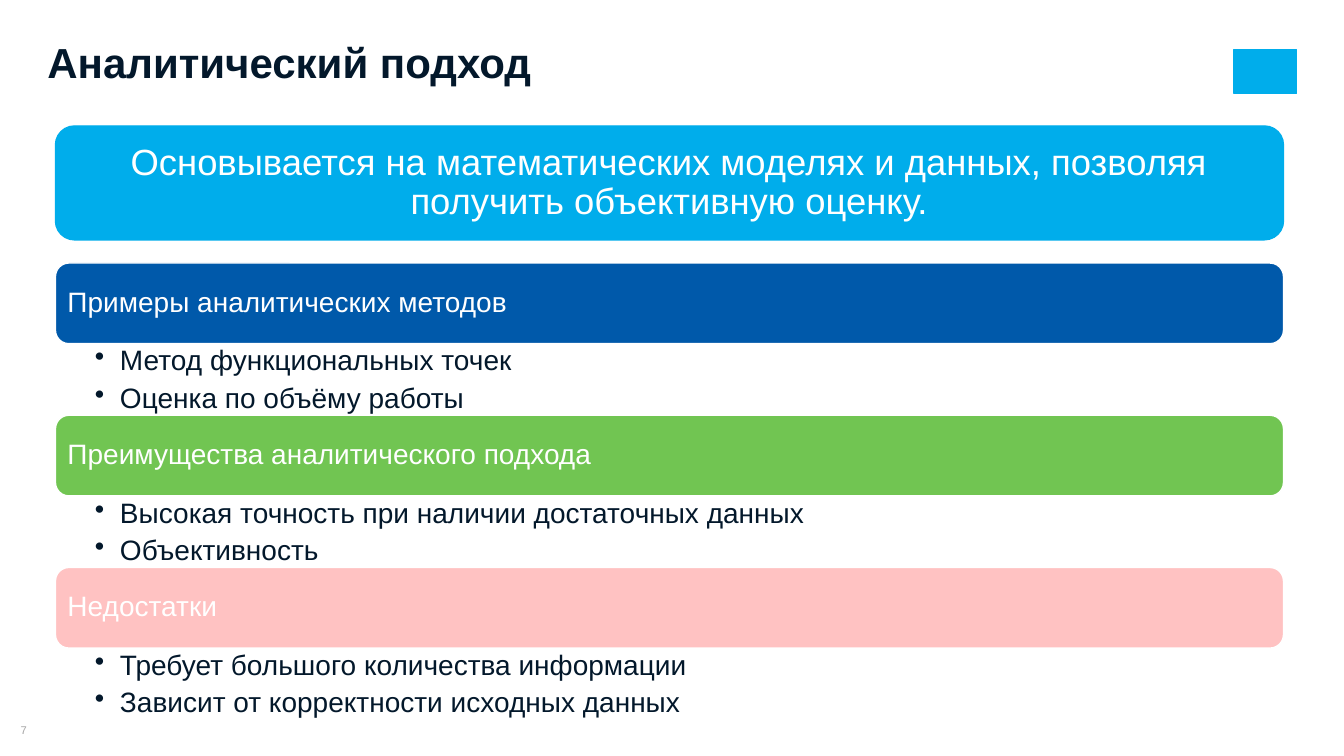
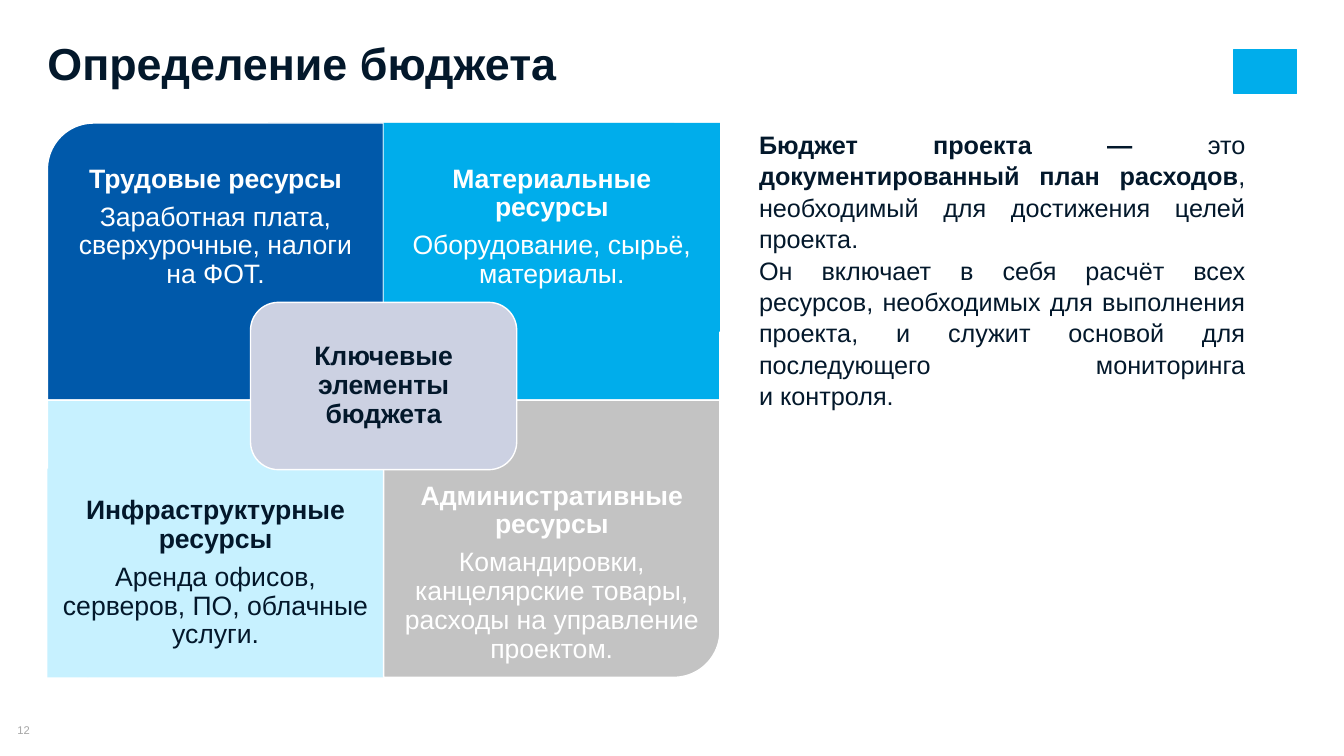
import pptx
import pptx.util
import pptx.dml.color
import pptx.enum.shapes
import pptx.enum.text
import lxml.etree

Inches = pptx.util.Inches
Pt = pptx.util.Pt
SHAPES = pptx.enum.shapes.MSO_SHAPE
ANCHOR = pptx.enum.text.MSO_ANCHOR
ALIGN = pptx.enum.text.PP_ALIGN

FONT = "Arial"
INK, WHITE, GRAY = "03182B", "FFFFFF", "A6A6A6"
BLUE, CYAN, GREEN, RED = "0059AA", "00ADEB", "71C552", "FF0000"
PALE, SILVER, LAVENDER = "C7F1FF", "C3C3C3", "CCD1E2"

APPROACH = {
    "title": "Аналитический подход",
    "title_size": 30,
    "number": "7",
    "summary": "Основывается на математических моделях и данных, позволяя получить объективную оценку.",
    "sections": [
        ("Примеры аналитических методов", BLUE, 100,
         ["Метод функциональных точек", "Оценка по объёму работы"]),
        ("Преимущества аналитического подхода", GREEN, 100,
         ["Высокая точность при наличии достаточных данных", "Объективность"]),
        ("Недостатки", RED, 24,
         ["Требует большого количества информации", "Зависит от корректности исходных данных"]),
    ],
}

BUDGET = {
    "title": "Определение бюджета",
    "title_size": 32,
    "number": "12",
    "center": "Ключевые элементы бюджета",
    "resources": [
        ("Трудовые ресурсы", "Заработная плата, сверхурочные, налоги на ФОТ.", BLUE, WHITE, 270),
        ("Материальные ресурсы", "Оборудование, сырьё, материалы.", CYAN, WHITE, 0),
        ("Инфраструктурные ресурсы", "Аренда офисов, серверов, ПО, облачные услуги.", PALE, INK, 180),
        ("Административные ресурсы",
         "Командировки, канцелярские товары, расходы на управление проектом.", SILVER, WHITE, 90),
    ],
    "definition": [
        [("Бюджет проекта — ", True), ("это ", False),
         ("документированный план расходов", True),
         (", необходимый для достижения целей проекта.", False)],
        [("Он включает в себя расчёт всех ресурсов, необходимых для выполнения проекта, "
          "и служит основой для последующего мониторинга", False),
         ("\n", False), ("и контроля.", False)],
    ],
}


def rgb(value):
    return pptx.dml.color.RGBColor.from_string(value)


def add_bullet(para):
    properties = para._p.get_or_add_pPr()
    properties.set("marL", str(Inches(0.25)))
    properties.set("indent", str(Inches(-0.25)))
    bullet = lxml.etree.SubElement(properties, pptx.oxml.ns.qn("a:buChar"))
    bullet.set("char", "•")


def write(box, paragraphs, size=20, color=INK, align=ALIGN.LEFT, anchor=ANCHOR.TOP,
          insets=(0, 0, 0, 0), spacing=0.9, after=0, bullets=False):
    frame = box.text_frame
    frame.word_wrap = True
    frame.auto_size = pptx.enum.text.MSO_AUTO_SIZE.NONE
    frame.vertical_anchor = anchor
    (frame.margin_left, frame.margin_top,
     frame.margin_right, frame.margin_bottom) = [Inches(inset) for inset in insets]
    for index, spans in enumerate(paragraphs):
        para = frame.add_paragraph() if index else frame.paragraphs[0]
        para.alignment = align
        para.line_spacing = spacing
        para.space_before = Pt(0)
        para.space_after = Pt(after)
        if bullets:
            add_bullet(para)
        for text, bold in spans:
            if text == "\n":
                para.add_line_break()
                continue
            span = para.add_run()
            span.text = text
            span.font.name = FONT
            span.font.size = Pt(size)
            span.font.bold = bold
            span.font.color.rgb = rgb(color)


def add_text(page, frame, paragraphs, **style):
    box = page.shapes.add_textbox(*map(Inches, frame))
    write(box, paragraphs, **style)
    return box


def add_panel(page, kind, frame, fill, line=WHITE, opacity=100, rotation=0):
    panel = page.shapes.add_shape(kind, *map(Inches, frame))
    panel.shadow.inherit = False
    panel.rotation = rotation
    panel.fill.solid()
    panel.fill.fore_color.rgb = rgb(fill)
    panel.line.color.rgb = rgb(line)
    panel.line.width = Pt(1)
    if opacity < 100:
        color = panel.fill._xPr.find(".//" + pptx.oxml.ns.qn("a:srgbClr"))
        alpha = lxml.etree.SubElement(color, pptx.oxml.ns.qn("a:alpha"))
        alpha.set("val", str(opacity * 1000))
    return panel


def add_page(deck, content):
    page = deck.slides.add_slide(deck.slide_layouts.get_by_name("Title Only"))
    title = page.shapes.title
    title.left, title.top, title.width, title.height = map(Inches, (0.47, 0.46, 10.51, 0.43))
    write(title, [[(content["title"], True)]], size=content["title_size"], spacing=0.8)
    add_panel(page, SHAPES.RECTANGLE, (12.24, 0.49, 0.62, 0.44), CYAN, line=CYAN)
    add_text(page, (0, 7.18, 0.47, 0.13), [[(content["number"], False)]], size=8,
             color=GRAY, align=ALIGN.CENTER, anchor=ANCHOR.MIDDLE, spacing=1)
    return page


def build_approach(deck):
    page = add_page(deck, APPROACH)
    left, width, bar_height, list_height = 0.55, 12.18, 0.8, 0.71
    for index, (heading, fill, opacity, items) in enumerate(APPROACH["sections"]):
        top = 2.61 + index * (bar_height + list_height)
        bar = add_panel(page, SHAPES.ROUNDED_RECTANGLE, (left, top, width, bar_height),
                        fill, opacity=opacity)
        write(bar, [[(heading, False)]], color=WHITE, anchor=ANCHOR.MIDDLE, insets=(0.08,) * 4)
        add_text(page, (left, top + bar_height, width, list_height),
                 [[(item, False)] for item in items], after=5,
                 insets=(0.39, 0.03, 0.16, 0.03), bullets=True)
    summary = add_panel(page, SHAPES.ROUNDED_RECTANGLE, (left, 1.25, width, 1.13), CYAN, line=CYAN)
    write(summary, [[(APPROACH["summary"], False)]], size=26, color=WHITE,
          align=ALIGN.CENTER, anchor=ANCHOR.MIDDLE, insets=(0.11,) * 4)


def build_budget(deck):
    page = add_page(deck, BUDGET)
    left, top, width, height, text_height = 0.47, 1.22, 3.335, 2.75, 2.07
    centered = {"size": 19, "align": ALIGN.CENTER, "anchor": ANCHOR.MIDDLE}
    for index, (heading, detail, fill, color, rotation) in enumerate(BUDGET["resources"]):
        row, column = divmod(index, 2)
        x, y = left + column * width, top + row * height
        upright = rotation % 180 == 0
        w, h = (width, height) if upright else (height, width)
        frame = (x + (width - w) / 2, y + (height - h) / 2, w, h)
        add_panel(page, SHAPES.ROUND_1_RECTANGLE, frame, fill, rotation=rotation)
        caption = add_text(page, (x, y + row * (height - text_height), width, text_height),
                           [[(heading, True)], [(detail, False)]], color=color,
                           insets=(0.15,) * 4, after=6.65, **centered)
        if upright:
            caption.fill.solid()
            caption.fill.fore_color.rgb = rgb(fill)
    w, h = 2.64, 1.66
    center = add_panel(page, SHAPES.ROUNDED_RECTANGLE,
                       (left + width - w / 2, 3, w, h), LAVENDER)
    write(center, [[(BUDGET["center"], True)]], insets=(0.08,) * 4, **centered)
    add_text(page, (7.43, top, 5.02, 2.83), BUDGET["definition"], size=18,
             align=ALIGN.JUSTIFY, insets=(0.1, 0.05, 0.1, 0.05), spacing=1.04)


def main():
    deck = pptx.Presentation()
    deck.slide_width, deck.slide_height = Inches(13.33), Inches(7.5)
    build_approach(deck)
    build_budget(deck)
    deck.save("out.pptx")


if __name__ == "__main__":
    main()
